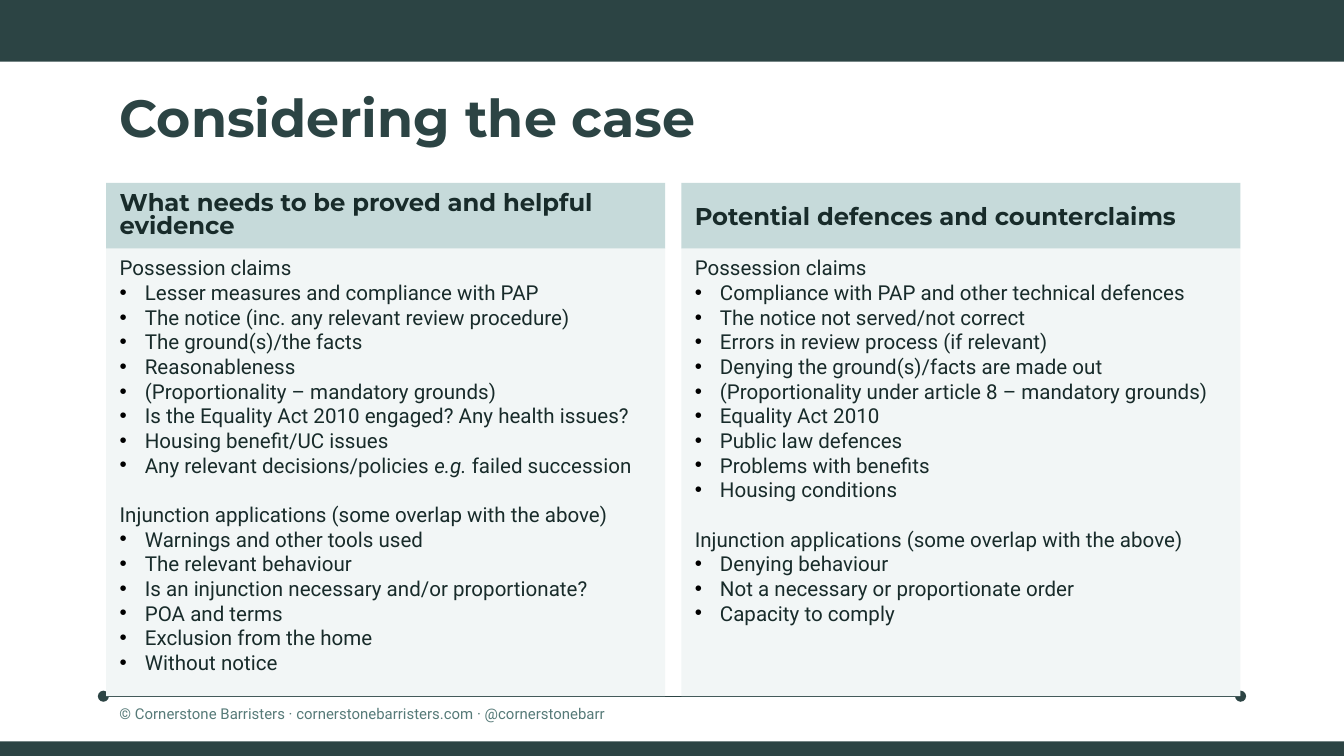
from lxml import etree
from pptx import Presentation
from pptx import util as u
from pptx.dml import color
from pptx.enum import shapes, text
from pptx.oxml import ns

DARK, INK, MUTED = "2C4444", "182B2A", "567A78"
HEADER_FILL, PANEL_FILL = "C6DADA", "F2F6F6"
TITLE_FORMAT = {"name": "Montserrat", "size": u.Pt(28), "bold": True}
HEADER_FORMAT = {"name": "Montserrat", "size": u.Pt(13), "bold": True}
BODY_FORMAT = {"name": "Roboto", "size": u.Pt(11), "bold": False}
FOOTER_FORMAT = {"name": "Roboto", "size": u.Pt(8)}
LINE_PITCH = 13.2
INDENT = 13.5
HEADER_HEIGHT = 35.3

COLUMNS = [
    ("What needs to be proved and helpful evidence", 0.8, [
        ("Possession claims", [
            "Lesser measures and compliance with PAP",
            "The notice (inc. any relevant review procedure)",
            "The ground(s)/the facts",
            "Reasonableness",
            "(Proportionality – mandatory grounds)",
            "Is the Equality Act 2010 engaged? Any health issues?",
            "Housing benefit/UC issues",
            "Any relevant decisions/policies *e.g. *failed succession",
        ]),
        ("Injunction applications (some overlap with the above)", [
            "Warnings and other tools used",
            "The relevant behaviour",
            "Is an injunction necessary and/or proportionate?",
            "POA and terms",
            "Exclusion from the home",
            "Without notice",
        ]),
    ]),
    ("Potential defences and counterclaims", 1.0, [
        ("Possession claims", [
            "Compliance with PAP and other technical defences",
            "The notice not served/not correct",
            "Errors in review process (if relevant)",
            "Denying the ground(s)/facts are made out",
            "(Proportionality under article 8 – mandatory grounds)",
            "Equality Act 2010",
            "Public law defences",
            "Problems with benefits",
            "Housing conditions",
        ]),
        ("Injunction applications (some overlap with the above)", [
            "Denying behaviour",
            "Not a necessary or proportionate order",
            "Capacity to comply",
        ]),
    ]),
]


def rgb(value):
    """Return the colour for a hex string."""
    return color.RGBColor.from_string(value)


def place(shape, box):
    """Move and size a shape to a box given in points."""
    for name, length in zip(("left", "top", "width", "height"), box):
        setattr(shape, name, u.Pt(length))


def fill(shape, value):
    """Give a shape a solid fill."""
    shape.fill.solid()
    shape.fill.fore_color.rgb = rgb(value)


def prepare(shape, anchor=text.MSO_ANCHOR.TOP):
    """Set wrapping and anchoring and return the text frame."""
    frame = shape.text_frame
    settings = {"word_wrap": True, "auto_size": text.MSO_AUTO_SIZE.NONE,
                "vertical_anchor": anchor}
    for name, value in settings.items():
        setattr(frame, name, value)
    return frame


def set_bullet(paragraph, bulleted):
    """Add a hanging bullet to a paragraph, or remove the inherited one."""
    properties = paragraph._p.get_or_add_pPr()
    indent = u.Pt(INDENT) if bulleted else 0
    properties.set("marL", str(indent))
    properties.set("indent", str(-indent))
    if not bulleted:
        etree.SubElement(properties, ns.qn("a:buNone"))
        return
    bullet_colour = etree.SubElement(properties, ns.qn("a:buClr"))
    etree.SubElement(bullet_colour, ns.qn("a:srgbClr"), val="000000")
    etree.SubElement(properties, ns.qn("a:buFont"), typeface="Arial")
    etree.SubElement(properties, ns.qn("a:buChar"), char="•")


def write(paragraph, content, font_format, value, bulleted=False, space=0, spacing=1.0):
    """Write a paragraph in which asterisks enclose italic words."""
    set_bullet(paragraph, bulleted)
    layout = {"alignment": text.PP_ALIGN.LEFT, "line_spacing": spacing,
              "space_before": u.Pt(space), "space_after": u.Pt(0)}
    for name, setting in layout.items():
        setattr(paragraph, name, setting)
    for index, part in enumerate(content.split("*")):
        run = paragraph.add_run()
        run.text = part
        for name, setting in font_format.items():
            setattr(run.font, name, setting)
        run.font.italic = index % 2 == 1
        run.font.color.rgb = rgb(value)


def add_title(shape, box):
    """Fill the title placeholder."""
    place(shape, box)
    write(prepare(shape).paragraphs[0], "Considering the case", TITLE_FORMAT, DARK)


def add_column(header, panel, box, column):
    """Fill a header placeholder and the list placeholder below it."""
    left, top, width, height = box
    heading, spacing, sections = column
    place(header, (left, top, width, HEADER_HEIGHT))
    place(panel, (left, top + HEADER_HEIGHT, width, height - HEADER_HEIGHT))
    fill(header, HEADER_FILL)
    fill(panel, PANEL_FILL)
    frame = prepare(header, text.MSO_ANCHOR.MIDDLE)
    write(frame.paragraphs[0], heading, HEADER_FORMAT, INK, spacing=spacing)
    frame = prepare(panel)
    for index, (section, items) in enumerate(sections):
        paragraph = frame.add_paragraph() if index else frame.paragraphs[0]
        write(paragraph, section, BODY_FORMAT, INK, space=LINE_PITCH if index else 0)
        for item in items:
            write(frame.add_paragraph(), item, BODY_FORMAT, INK, bulleted=True)


def add_band(slide, box):
    """Add a dark band across the slide."""
    band = slide.shapes.add_shape(shapes.MSO_SHAPE.RECTANGLE, *map(u.Pt, box))
    band.shadow.inherit = False
    fill(band, DARK)
    band.line.fill.background()


def add_rule(slide, left, right, y):
    """Add a round-ended rule behind everything else."""
    rule = slide.shapes.add_connector(
        shapes.MSO_CONNECTOR.STRAIGHT, u.Pt(left), u.Pt(y), u.Pt(right), u.Pt(y))
    rule.line.color.rgb = rgb(DARK)
    rule.line.width = u.Pt(0.75)
    line = rule.line._get_or_add_ln()
    for end in ("a:headEnd", "a:tailEnd"):
        etree.SubElement(line, ns.qn(end), type="oval")
    etree.SubElement(rule._element.spPr, ns.qn("a:effectLst"))
    slide.shapes._spTree.insert(2, rule._element)


def add_footer(slide, box):
    """Add the copyright line."""
    footer = slide.shapes.add_textbox(*map(u.Pt, box))
    frame = prepare(footer)
    for side in ("left", "top", "right", "bottom"):
        setattr(frame, f"margin_{side}", u.Pt(7.2))
    write(frame.paragraphs[0],
          "© Cornerstone Barristers · cornerstonebarristers.com · @cornerstonebarr",
          FOOTER_FORMAT, MUTED)


def main():
    """Build and save the presentation."""
    presentation = Presentation()
    presentation.slide_width, presentation.slide_height = u.Pt(720), u.Pt(405)
    slide = presentation.slides.add_slide(presentation.slide_layouts[4])
    title, *parts = slide.placeholders
    add_title(title, (56.9, 41.8, 607.7, 41.8))
    for index, column in enumerate(COLUMNS):
        header, panel = parts[2 * index:2 * index + 2]
        add_column(header, panel, (56.9 + 308.1 * index, 97.9, 299.5, 275.1), column)
    add_band(slide, (0, 0, 720, 33.1))
    add_band(slide, (0, 397.2, 720, 7.8))
    add_rule(slide, 55.4, 664.6, 373)
    add_footer(slide, (56.9, 370.1, 356.4, 22.3))
    presentation.save("out.pptx")


if __name__ == "__main__":
    main()
